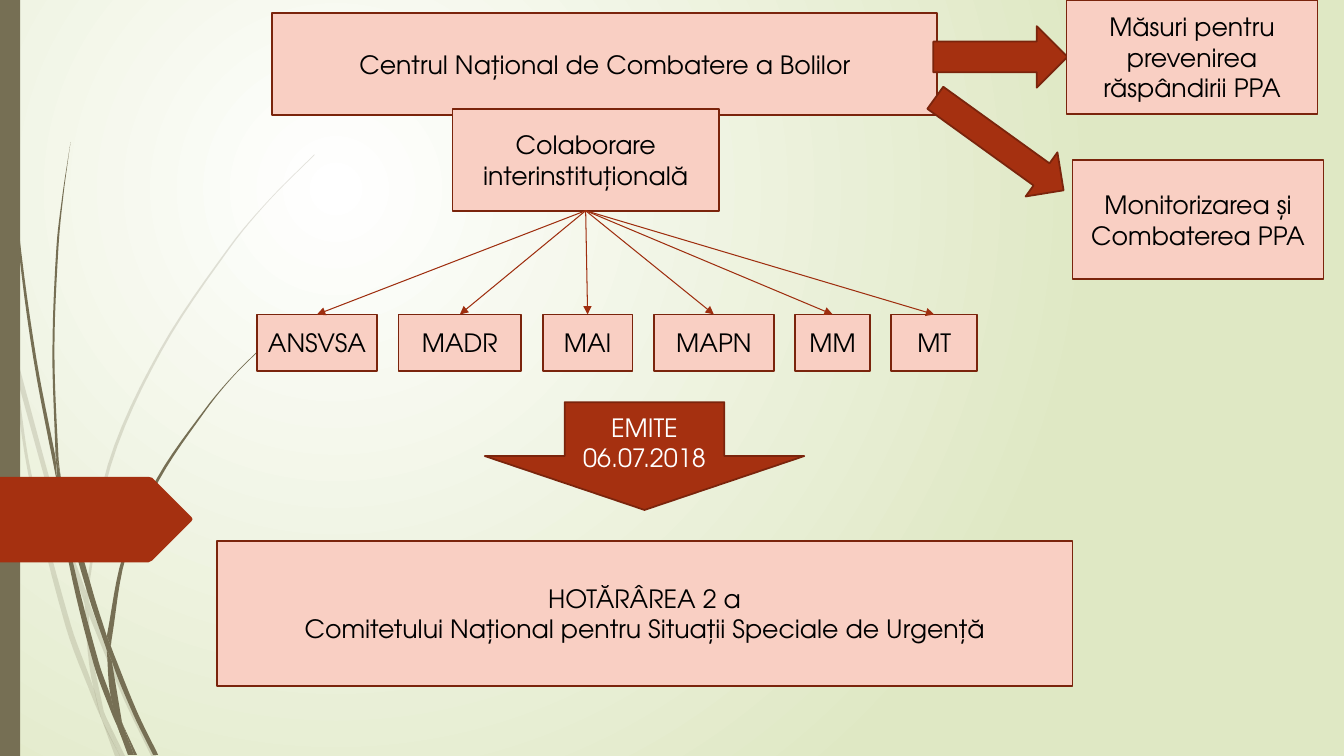
import math
import pptx
import pptx.util
import pptx.oxml
import pptx.dml.color
import pptx.enum.shapes
import pptx.enum.text
from pptx.oxml.ns import qn

Pt = pptx.util.Pt
SHAPE = pptx.enum.shapes.MSO_SHAPE
FONT = "TeX Gyre Adventor"
COLORS = {
    "white": "FFFFFF", "green": "DFE8C4", "stem": "766F54", "red": "A53010",
    "pink": "F9CFC3", "outline": "7A240C", "arrow": "9E2E0F", "black": "000000",
}
UNIT = 0.72  # points per step of the stem grid

# Each stem piece has two edges, walked down one side and back up the other
BACK_STEMS = [
    ([(11, 350), (9, 322), (0, 282)], [(0, 299), (10, 344)]),
    ([(17, 376), (58, 522), (84, 599)], [(85, 586), (62, 520), (14, 345)]),
    ([(88, 610), (123, 694), (150, 750)], [(155, 750), (127, 692), (92, 607), (88, 596)]),
    ([(105, 711), (119, 750)], [(124, 750)]),
    ([(11, 350), (28, 470), (65, 621), (92, 693), (101, 714)],
     [(99, 707), (93, 683), (70, 619), (31, 469), (17, 376)]),
    ([(84, 599), (87, 646), (93, 683), (105, 711)], [(103, 706), (91, 646), (88, 610)]),
    ([(88, 596), (88, 584), (110, 462), (160, 349), (229, 245), (268, 198), (312, 154)],
     [(312, 153), (268, 197), (228, 244), (158, 348), (107, 461), (85, 586)]),
    ([(101, 714), (114, 750)], [(119, 750)]),
    ([(84, 599), (88, 610)], [(88, 596), (85, 586)]),
    ([(93, 683), (101, 714), (119, 750)], [(105, 711), (96, 692)]),
]
FRONT_STEMS = [
    ([(3, 0), (4, 48), (7, 110), (17, 233), (33, 355), (57, 481)],
     [(55, 453), (36, 355), (19, 232), (8, 109), (5, 48), (4, 0)]),
    ([(60, 472), (64, 505), (88, 592), (106, 645)], [(106, 631), (93, 590), (60, 472)]),
    ([(110, 641), (111, 656), (132, 708), (152, 749)], [(157, 749), (136, 706), (113, 649)]),
    ([(57, 477), (68, 557), (93, 659), (111, 708), (117, 722)],
     [(110, 691), (98, 657), (72, 556), (64, 505)]),
    ([(60, 472), (58, 453), (54, 349), (58, 245), (63, 193), (70, 141)],
     [(70, 141), (62, 193), (56, 245), (52, 349), (55, 449)]),
    ([(122, 719), (133, 749)], [(136, 749)]),
    ([(55, 449), (57, 477)], [(64, 505), (60, 472)]),
    ([(110, 641), (111, 633), (125, 552), (158, 476), (205, 406), (231, 374), (261, 344)],
     [(260, 344), (231, 373), (204, 405), (156, 474), (122, 551), (106, 631)]),
    ([(117, 722), (127, 749)], [(131, 749)]),
    ([(106, 645), (110, 691), (122, 719)], [(121, 716), (111, 656)]),
    ([(106, 631), (106, 645)], [(111, 656), (110, 641)]),
    ([(110, 691), (117, 722), (130, 749)], [(133, 749), (122, 719)]),
]
TAB = [(0, 473), (147, 473), (151, 474), (190, 513), (191, 515),
       (190, 517), (151, 556), (147, 558), (0, 558)]
MINISTRIES = [("ANSVSA", 85.7), ("MADR", 87.8), ("MAI", 64.1),
              ("MAPN", 85.7), ("MM", 53.3), ("MT", 61.2)]


def rgb(name):
    return pptx.dml.color.RGBColor.from_string(COLORS[name])


def smooth(pts, steps=6):
    """Points along a curve that passes through all of pts."""
    ends = [pts[0], *pts, pts[-1]]
    slopes = []
    for a, b, c in zip(ends, pts, ends[2:]):
        length = math.dist(a, b) + math.dist(b, c) or 1
        slopes.append(((c[0] - a[0]) / length, (c[1] - a[1]) / length))
    curve = [pts[0]]
    for a, b, m, n in zip(pts, pts[1:], slopes, slopes[1:]):
        d = math.dist(a, b)
        for t in (i / steps for i in range(1, steps + 1)):
            h = (2*t**3 - 3*t**2 + 1, t**3 - 2*t**2 + t, 3*t**2 - 2*t**3, t**3 - t**2)
            curve.append(tuple(h[0]*a[k] + h[1]*d*m[k] + h[2]*b[k] + h[3]*d*n[k]
                               for k in (0, 1)))
    return curve


def outline(shapes, pts, color, alpha=None):
    emu = [(Pt(x * UNIT), Pt(y * UNIT)) for x, y in pts]
    fb = shapes.build_freeform(*emu[0], scale=1.0)
    fb.add_line_segments(emu[1:], close=True)
    sp = fb.convert_to_shape()
    sp.shadow.inherit = False
    sp.line.fill.background()
    sp.fill.solid()
    sp.fill.fore_color.rgb = rgb(color)
    if alpha:
        clr = sp._element.spPr.find(qn("a:solidFill"))[0]
        clr.append(pptx.oxml.parse_xml(
            f'<a:alpha {pptx.oxml.ns.nsdecls("a")} val="{alpha * 1000}"/>'))


def write(sp, text, size=18, color="black"):
    tf = sp.text_frame
    tf.word_wrap = True
    tf.vertical_anchor = pptx.enum.text.MSO_ANCHOR.MIDDLE
    for i, line in enumerate(text.split("\n")):
        p = tf.paragraphs[0] if i == 0 else tf.add_paragraph()
        p.alignment = pptx.enum.text.PP_ALIGN.CENTER
        r = p.add_run()
        r.text = line
        r.font.name, r.font.size = FONT, Pt(size)
        r.font.color.rgb = rgb(color)


def block(s, kind, x, y, w, h, fill="pink", text=None, line="outline", **fmt):
    sp = s.shapes.add_shape(kind, Pt(x), Pt(y), Pt(w), Pt(h))
    sp.shadow.inherit = False
    sp.fill.solid()
    sp.fill.fore_color.rgb = rgb(fill)
    if line:
        sp.line.color.rgb, sp.line.width = rgb(line), Pt(1.25)
    else:
        sp.line.fill.background()
    if text:
        write(sp, text, **fmt)
    return sp


def background(s):
    fill = s.background.fill
    fill.gradient()
    for stop, color in zip(fill.gradient_stops, ("white", "green")):
        stop.color.rgb = rgb(color)
    grad = s._element.find(".//" + qn("a:gradFill"))
    grad.replace(grad.find(qn("a:lin")), pptx.oxml.parse_xml(
        f'<a:path {pptx.oxml.ns.nsdecls("a")} path="circle">'
        '<a:fillToRect l="50000" t="50000" r="100000" b="100000"/></a:path>'))


def decoration(s, w, h):
    for stems, alpha in ((BACK_STEMS, 20), (FRONT_STEMS, None)):
        shapes = s.shapes.add_group_shape().shapes
        for down, up in stems:
            outline(shapes, smooth(down) + smooth(up), "stem", alpha)
    block(s, SHAPE.RECTANGLE, 0, 0, w, h, fill="stem", line=None)
    outline(s.shapes, TAB, "red")


def measures(s, x, y):
    """Centre at the left, two arrows and two measures at the right."""
    block(s, SHAPE.RECTANGLE, x, y, 475.2, 72.7, text="Centrul Național de Combatere a Bolilor")
    block(s, SHAPE.RIGHT_ARROW, x + 472.3, y + 9.3, 95.8, 43.9, fill="red")
    block(s, SHAPE.RECTANGLE, x + 567.4, y - 9.4, 179.3, 81.4,
          text="Măsuri pentru prevenirea răspândirii PPA")
    block(s, SHAPE.RECTANGLE, x + 571.7, y + 105.1, 179.3, 85,
          text="Monitorizarea și Combaterea PPA")
    sp = block(s, SHAPE.RIGHT_ARROW, x + 463, y + 74.1, 113, 38.9, fill="red")
    sp.rotation = 35.8


def ministries(s, x, y, gap=15.3):
    """Collaboration box with an arrow to each ministry in the row below."""
    top = block(s, SHAPE.RECTANGLE, x + 139.7, y, 190.1, 72.7,
                text="Colaborare\ninterinstituțională".replace("\n", " "))
    row = []
    for name, w in MINISTRIES:
        row.append(block(s, SHAPE.RECTANGLE, x, y + 146.8, w, 40.3, text=name))
        x += w + gap
    for sp in row:
        c = s.shapes.add_connector(pptx.enum.shapes.MSO_CONNECTOR.STRAIGHT, 0, 0, 0, 0)
        c.begin_connect(top, 2)
        c.end_connect(sp, 0)
        c.line.color.rgb, c.line.width = rgb("arrow"), Pt(0.75)
        ns = pptx.oxml.ns.nsdecls("a")
        c.line._get_or_add_ln().append(
            pptx.oxml.parse_xml(f'<a:tailEnd {ns} type="triangle"/>'))
        c._element.spPr.append(pptx.oxml.parse_xml(f"<a:effectLst {ns}/>"))


def decision(s, x, y):
    block(s, SHAPE.RECTANGLE, x, y + 99.3, 611.3, 103.7,
          text="HOTĂRÂREA 2 a\nComitetului Național pentru Situații Speciale de Urgență")
    block(s, SHAPE.DOWN_ARROW, x + 191.5, y, 228.2, 77, fill="red",
          text="EMITE\n06.07.2018", color="white")


def main():
    prs = pptx.Presentation()
    prs.slide_width, prs.slide_height = Pt(960), Pt(540)
    s = prs.slides.add_slide(prs.slide_layouts[6])
    background(s)
    decoration(s, 14.4, 540)
    measures(s, 194.4, 9.4)
    ministries(s, 183.6, 77.8)
    decision(s, 154.8, 287.3)
    prs.save("out.pptx")


if __name__ == "__main__":
    main()
